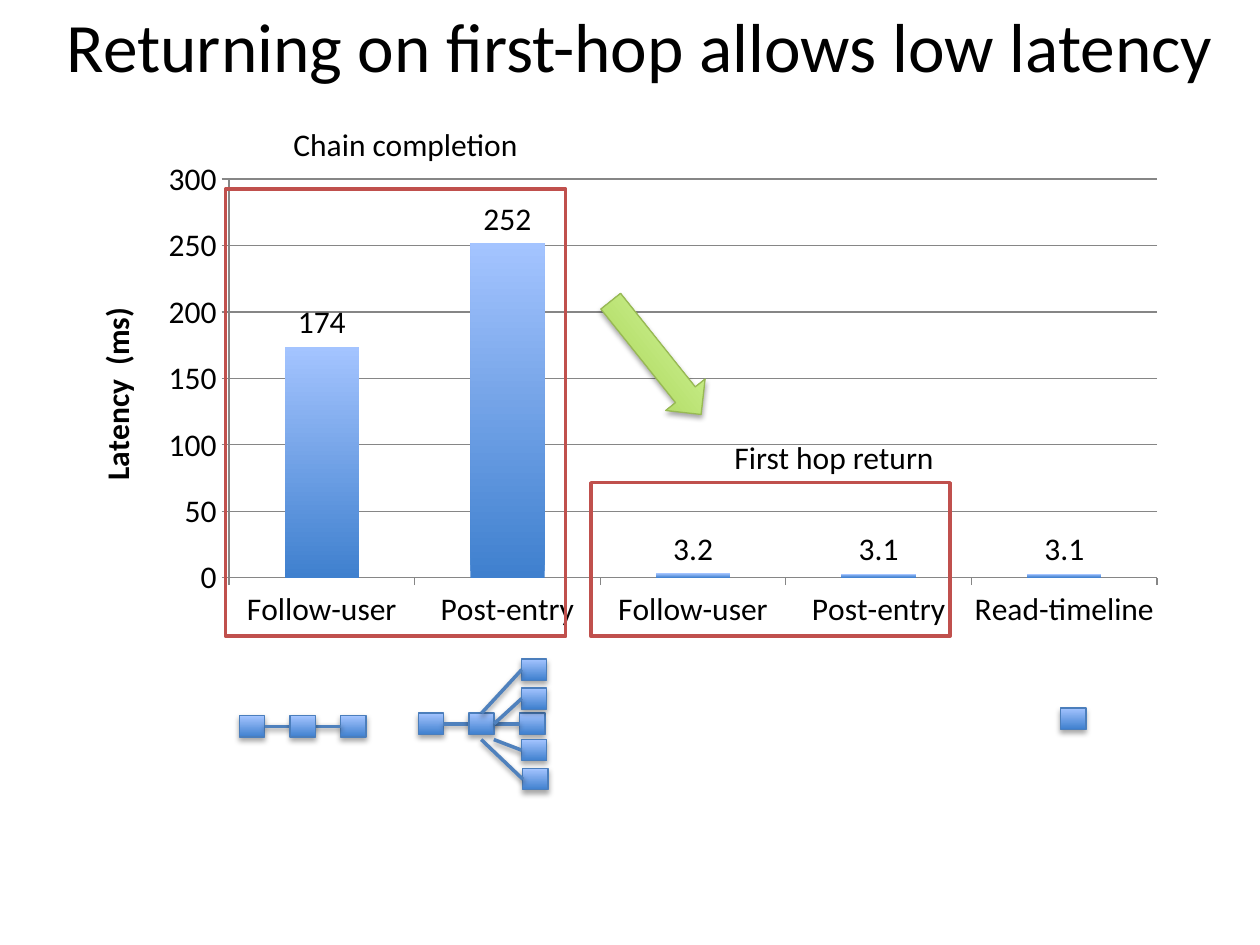
"""Build the slide on low latency from first-hop returns."""
from lxml.etree import SubElement
from pptx import Presentation
from pptx.chart.data import CategoryChartData
from pptx.dml.color import RGBColor
from pptx.enum.chart import XL_CHART_TYPE as ChartType, XL_LABEL_POSITION as LabelPosition
from pptx.enum.chart import XL_TICK_MARK as TickMark
from pptx.enum.shapes import MSO_CONNECTOR as Connector, MSO_SHAPE as Preset
from pptx.enum.text import MSO_ANCHOR as Anchor, MSO_AUTO_SIZE as AutoSize, PP_ALIGN as Align
from pptx.oxml import parse_xml
from pptx.oxml.ns import nsdecls, qn
from pptx.util import Pt

TITLE = ("Returning on first-hop allows low latency", (19.4, -19.4, 692.6, 90), 39.6)
CAPTIONS = [
    ("First hop return", (412.6, 247, 130.3, 28.8), 18),
    ("Chain completion", (160.6, 67.7, 144, 28.8), 18),
]
LATENCIES = [
    ("Follow-user", 174), ("Post-entry", 252),
    ("Follow-user", 3.2), ("Post-entry", 3.1), ("Read-timeline", 3.1),
]
CHART_BOX = (42.5, 85.7, 631.4, 277.9)
PLOT_AREA = {"x": 0.14, "y": 0.06, "w": 0.84, "h": 0.82}
FRAMES = [(128.9, 108, 194.4, 255.6), (337.7, 275.8, 205.2, 87.8)]
ARROW_BOX, ARROW_TURN = (333.4, 190.1, 82.8, 28.8), 51.4

NODE_SIZE = (14.4, 12.2)
NODE_PITCH = 29
CHAIN_START = (136.8, 409)
TREE_START = (239, 407.5)
LEAVES = {
    "top": (298.1, 376.6), "upper": (298.1, 393.1),
    "lower": (298.1, 422.6), "bottom": (298.8, 439.2),
}
LOOSE_STARTS = {"lower": (282.2, 422.6), "bottom": (275, 422.6)}
READ_NODE = (606.2, 404.6)

BLUE_GRADIENT, BLUE_EDGE = ("3F80CE", "A4C4FF"), "4B7EBC"
GREEN_GRADIENT, GREEN_EDGE = ("A0CA4A", "DAFFA5"), "98B955"
FRAME_RED, LINK_BLUE, GRID_GREY, BLACK = "C0504D", "4F81BD", "868686", "000000"
TOP, LEFT, RIGHT = 0, 1, 3


def color(code):
    return RGBColor.from_string(code)


def points(values):
    return [Pt(value) for value in values]


def apply(target, values):
    for name, value in values.items():
        setattr(target, name, value)


def style_font(font, size, bold=False):
    apply(font, {"name": "Calibri", "size": Pt(size), "bold": bold})
    font.color.rgb = color(BLACK)


def style_line(line, code, width):
    line.color.rgb = color(code)
    line.width = Pt(width)


def fill_gradient(fill, codes):
    fill.gradient()
    fill.gradient_angle = 90
    for stop, code, position in zip(fill.gradient_stops, codes, (0, 1)):
        stop.color.rgb = color(code)
        stop.position = position


def cast_shadow(item, opacity, distance):
    properties = item._element.spPr
    for effects in properties.findall(qn("a:effectLst")):
        properties.remove(effects)
    properties.append(parse_xml(
        f'<a:effectLst {nsdecls("a")}><a:outerShdw blurRad="{Pt(3.1)}" dist="{Pt(distance)}"'
        f' dir="5400000" rotWithShape="0"><a:srgbClr val="{BLACK}">'
        f'<a:alpha val="{opacity * 1000}"/></a:srgbClr></a:outerShdw></a:effectLst>'))


def add_text(shapes, content, title=False):
    words, box, size = content
    frame = shapes.add_textbox(*points(box)).text_frame
    apply(frame, {
        "word_wrap": title,
        "auto_size": AutoSize.NONE if title else AutoSize.SHAPE_TO_FIT_TEXT,
        "vertical_anchor": Anchor.MIDDLE if title else Anchor.TOP,
    })
    paragraph = frame.paragraphs[0]
    paragraph.alignment = Align.CENTER if title else Align.LEFT
    run = paragraph.add_run()
    run.text = words
    style_font(run.font, size)


def add_latency_chart(shapes):
    data = CategoryChartData()
    data.categories = [label for label, _ in LATENCIES]
    data.add_series("Series 1", [value for _, value in LATENCIES])
    chart = shapes.add_chart(ChartType.COLUMN_CLUSTERED, *points(CHART_BOX), data).chart
    apply(chart, {"has_legend": False, "has_title": False})
    style_font(chart.font, 18)

    plot = chart.plots[0]
    apply(plot, {"gap_width": 150, "vary_by_categories": False, "has_data_labels": True})
    apply(plot.data_labels, {"show_value": True, "position": LabelPosition.OUTSIDE_END})
    fill_gradient(plot.series[0].format.fill, BLUE_GRADIENT)

    scale = chart.value_axis
    apply(scale, {"minimum_scale": 0, "maximum_scale": 300, "major_unit": 50,
                  "has_major_gridlines": True})
    style_line(scale.major_gridlines.format.line, GRID_GREY, 0.75)
    for axis in (scale, chart.category_axis):
        axis.major_tick_mark = TickMark.OUTSIDE
        style_line(axis.format.line, GRID_GREY, 0.75)
    caption = scale.axis_title.text_frame
    caption.text = "Latency  (ms)"
    style_font(caption.paragraphs[0].runs[0].font, 18, bold=True)

    area = chart._chartSpace.chart.plotArea
    for layout in area.findall(qn("c:layout")):
        area.remove(layout)
    layout = parse_xml(f'<c:layout {nsdecls("c")}/>')
    area.insert(0, layout)
    manual = SubElement(layout, qn("c:manualLayout"))
    settings = {"layoutTarget": "inner", "xMode": "edge", "yMode": "edge", **PLOT_AREA}
    for tag, value in settings.items():
        SubElement(manual, qn(f"c:{tag}")).set("val", str(value))


def add_frame(shapes, box):
    frame = shapes.add_shape(Preset.RECTANGLE, *points(box))
    frame.shadow.inherit = False
    frame.fill.background()
    style_line(frame.line, FRAME_RED, 2)


def add_glossy(shapes, preset, box, gradient, edge):
    item = shapes.add_shape(preset, *points(box))
    fill_gradient(item.fill, gradient)
    style_line(item.line, edge, 0.75)
    cast_shadow(item, 35, 1.8)
    return item


def add_node(shapes, corner):
    return add_glossy(shapes, Preset.RECTANGLE, (*corner, *NODE_SIZE), BLUE_GRADIENT, BLUE_EDGE)


def add_link(shapes, end, start=None, side=RIGHT, loose_start=(0, 0)):
    link = shapes.add_connector(Connector.STRAIGHT, *points(loose_start * 2))
    if start is not None:
        link.begin_connect(start, side)
    link.end_connect(end, LEFT)
    style_line(link.line, LINK_BLUE, 2)
    cast_shadow(link, 38, 1.6)


def add_chain(shapes, corner):
    left, top = corner
    first, last = [add_node(shapes, (left + step * NODE_PITCH, top)) for step in (0, 2)]
    add_link(shapes, last, first)
    return add_node(shapes, (left + NODE_PITCH, top))


def add_tree(shapes):
    hub = add_chain(shapes, TREE_START)
    leaves = {name: add_node(shapes, corner) for name, corner in LEAVES.items()}
    add_link(shapes, leaves["top"], hub, TOP)
    add_link(shapes, leaves["upper"], hub)
    for name, start in LOOSE_STARTS.items():
        add_link(shapes, leaves[name], loose_start=start)


def main():
    deck = Presentation()
    apply(deck, {"slide_width": Pt(720), "slide_height": Pt(540)})
    shapes = deck.slides.add_slide(deck.slide_layouts[6]).shapes
    add_text(shapes, TITLE, title=True)
    add_latency_chart(shapes)
    for box in FRAMES:
        add_frame(shapes, box)
    arrow = add_glossy(shapes, Preset.RIGHT_ARROW, ARROW_BOX, GREEN_GRADIENT, GREEN_EDGE)
    arrow.rotation = ARROW_TURN
    for caption in CAPTIONS:
        add_text(shapes, caption)
    add_chain(shapes, CHAIN_START)
    add_tree(shapes)
    add_node(shapes, READ_NODE)
    deck.save("out.pptx")


if __name__ == "__main__":
    main()
